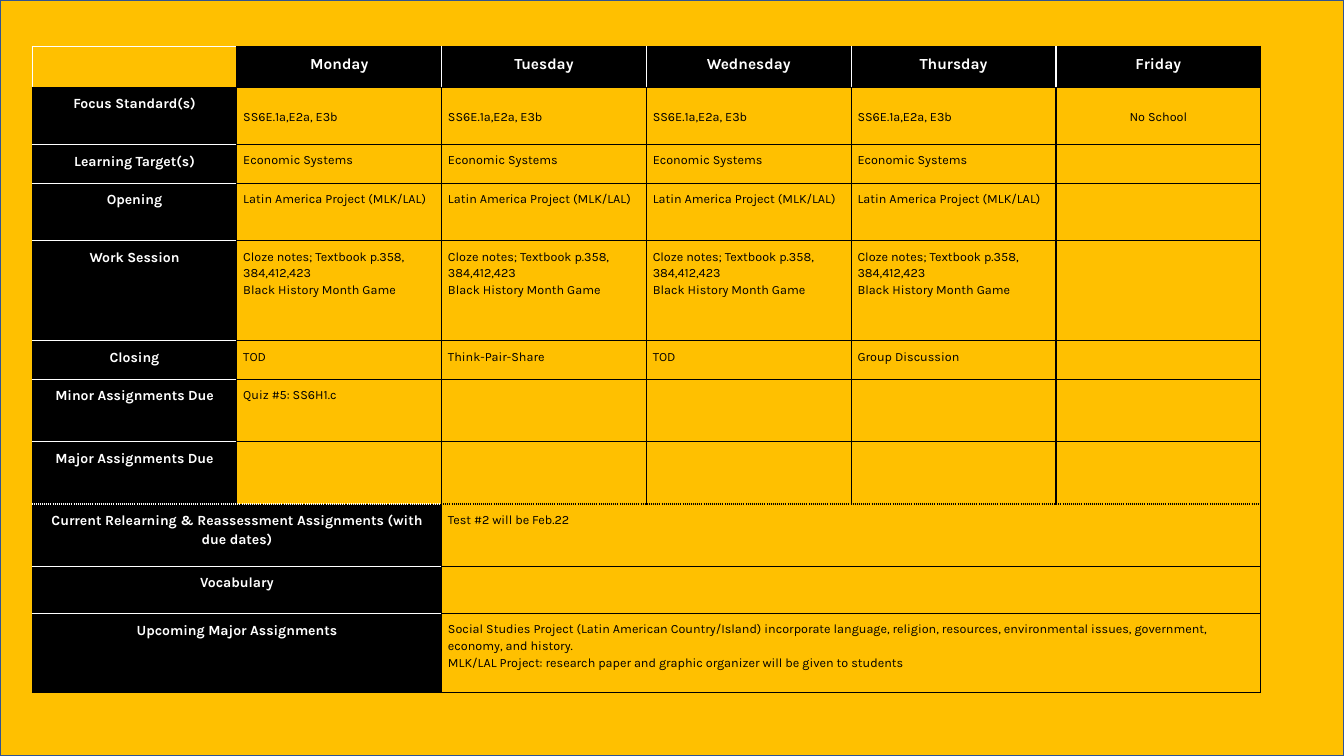
from dataclasses import dataclass

from lxml import etree
from pptx import Presentation
from pptx.dml.color import RGBColor
from pptx.enum.shapes import MSO_SHAPE
from pptx.enum.text import MSO_ANCHOR, PP_ALIGN
from pptx.oxml.ns import qn
from pptx.util import Cm, Pt

RECT = MSO_SHAPE.RECTANGLE
TOP = MSO_ANCHOR.TOP
LEFT, MID = PP_ALIGN.LEFT, PP_ALIGN.CENTER


@dataclass(frozen=True)
class Theme:
    gold: str = "FFC000"
    blue: str = "325491"
    black: str = "000000"
    white: str = "FFFFFF"
    font: str = "Karla"
    head: int = 11
    label: int = 10
    body: int = 9
    thin: float = 1
    thick: float = 2.25
    lead: float = 1.15
    inset: float = 0.16
    drop: float = 0.51


WIDTH, HEIGHT = 33.87, 19.05
COL = 5.16
DAYS = ["Monday", "Tuesday", "Wednesday", "Thursday", "Friday"]
WORK = "Cloze notes; Textbook p.358, 384,412,423\nBlack History Month Game"
# Row height in cm, label, one entry per day
WEEK = [
    (1.03, "", DAYS),
    (1.45, "Focus Standard(s)", ["SS6E.1a,E2a, E3b"] * 4 + ["No School"]),
    (0.97, "Learning Target(s)", ["Economic Systems"] * 4 + [""]),
    (1.45, "Opening", ["Latin America Project (MLK/LAL)"] * 4 + [""]),
    (2.52, "Work Session", [WORK] * 4 + [""]),
    (0.97, "Closing", ["TOD", "Think-Pair-Share", "TOD", "Group Discussion", ""]),
    (1.57, "Minor Assignments Due", ["Quiz #5: SS6H1.c"] + [""] * 4),
    (1.57, "Major Assignments Due", [""] * 5),
]
# Row height in cm, wide label, wide entry
NOTES = [
    (1.57, "Current Relearning & Reassessment Assignments (with due dates)",
     "Test #2 will be Feb.22"),
    (1.19, "Vocabulary", ""),
    (1.98, "Upcoming Major Assignments",
     "Social Studies Project (Latin American Country/Island) incorporate "
     "language, religion, resources, environmental issues, government, "
     "economy, and history.\n"
     "MLK/LAL Project: research paper and graphic organizer will be given "
     "to students"),
]
SPLIT = len(WEEK)
LAST = SPLIT + len(NOTES) - 1


def is_label(row, col):
    return row > 0 and (col == 0 or (row >= SPLIT and col == 1))


def white_sides(row, col):
    """Give the sides of a cell, out of L, R, T and B, that are ruled in white."""
    if row == 0:
        if col == 0:
            return "LT"
        return ("L" if col > 1 else "") + ("R" if col < len(DAYS) else "")
    if is_label(row, col):
        return ("T" if row > 1 else "") + ("B" if row < LAST else "")
    return ""


class Deck:
    def __init__(self, theme):
        self.theme = theme
        self.prs = Presentation()
        self.prs.slide_width, self.prs.slide_height = Cm(WIDTH), Cm(HEIGHT)
        self.slide = self.prs.slides.add_slide(self.prs.slide_layouts[6])

    def panel(self, left, top, width, height):
        box = self.slide.shapes.add_shape(
            RECT, Cm(left), Cm(top), Cm(width), Cm(height))
        box.shadow.inherit = False
        box.fill.solid()
        box.fill.fore_color.rgb = RGBColor.from_string(self.theme.gold)
        box.line.color.rgb = RGBColor.from_string(self.theme.blue)
        box.line.width = Pt(self.theme.thin)

    def grid(self, left, top, heights, cols):
        frame = self.slide.shapes.add_table(
            len(heights), cols, Cm(left), Cm(top),
            Cm(COL * cols), Cm(sum(heights)))
        table = frame.table
        table.first_row = table.horz_banding = False
        for col in table.columns:
            col.width = Cm(COL)
        for row, height in zip(table.rows, heights):
            row.height = Cm(height)
        return table

    def rule(self, cell, row, col):
        """Draw the four borders of a cell."""
        theme, white = self.theme, white_sides(row, col)
        props = cell._tc.get_or_add_tcPr()
        for side in "LRTB":
            dotted = (row, side) in ((SPLIT - 1, "B"), (SPLIT, "T"))
            width = Pt(theme.thick if dotted else theme.thin)
            line = etree.SubElement(props, qn("a:ln" + side), w=str(int(width)))
            fill = etree.SubElement(line, qn("a:solidFill"))
            color = theme.white if side in white else theme.black
            etree.SubElement(fill, qn("a:srgbClr"), val=color)
            dash = "dot" if dotted else "solid"
            etree.SubElement(line, qn("a:prstDash"), val=dash)

    def paint(self, cell, dark):
        if dark:
            cell.fill.solid()
            cell.fill.fore_color.rgb = RGBColor.from_string(self.theme.black)
        else:
            cell.fill.background()

    def label(self, cell, text, size, dark=False, align=LEFT, drop=False):
        """Set a cell's text, one paragraph for each line."""
        theme = self.theme
        cell.vertical_anchor = TOP
        cell.margin_left = cell.margin_right = Cm(theme.inset)
        cell.margin_bottom = Cm(theme.inset)
        cell.margin_top = Cm(theme.drop if drop else theme.inset)
        frame = cell.text_frame
        for index, words in enumerate(text.split("\n")):
            para = frame.add_paragraph() if index else frame.paragraphs[0]
            para.alignment, para.line_spacing = align, theme.lead
            if not words:
                etree.SubElement(para._p, qn("a:endParaRPr"), sz=str(size * 100))
                continue
            run = para.add_run()
            run.text = words
            run.font.name, run.font.size = theme.font, Pt(size)
            run.font.bold = dark
            run.font.color.rgb = RGBColor.from_string(
                theme.white if dark else theme.black)


def main():
    theme = Theme()
    deck = Deck(theme)
    deck.panel(0, 0, WIDTH, HEIGHT)
    cols = len(DAYS) + 1
    table = deck.grid(0.81, 1.17, [row[0] for row in WEEK + NOTES], cols)

    for row in range(LAST + 1):
        for col in range(cols):
            cell = table.cell(row, col)
            deck.rule(cell, row, col)
            deck.paint(cell, is_label(row, col) or (row == 0 and col > 0))

    for row, (_, name, days) in enumerate(WEEK):
        deck.label(table.cell(row, 0), name, theme.label, True, MID)
        for col, text in enumerate(days, 1):
            cell = table.cell(row, col)
            if row == 0:
                deck.label(cell, text, theme.head, True, MID)
            else:
                align = MID if text == "No School" else LEFT
                deck.label(cell, text, theme.body, align=align, drop=row == 1)

    for row, (_, name, text) in enumerate(NOTES, SPLIT):
        side, note = table.cell(row, 0), table.cell(row, 2)
        side.merge(table.cell(row, 1))
        note.merge(table.cell(row, cols - 1))
        deck.label(side, name, theme.label, True, MID)
        deck.label(note, text, theme.body)

    deck.prs.save("out.pptx")


if __name__ == "__main__":
    main()
